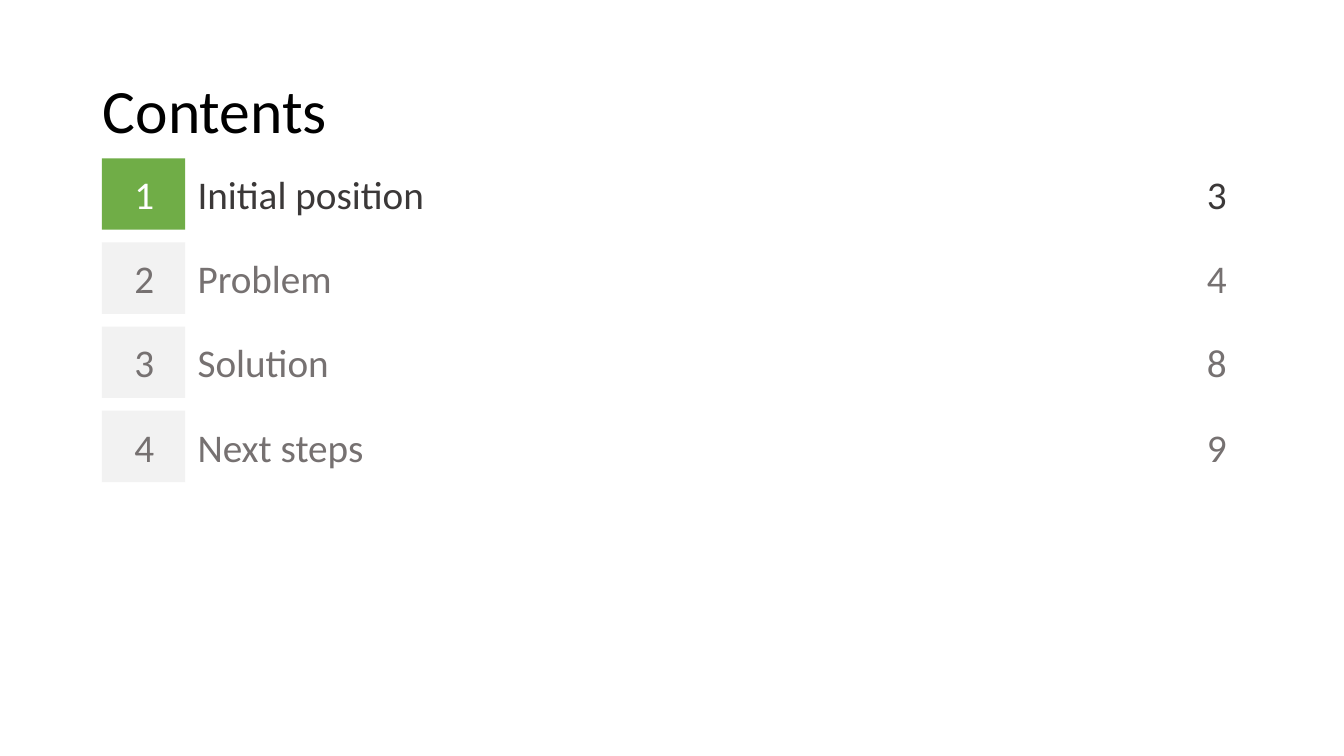
"""Build a contents slide with numbered chapters and page numbers."""
from dataclasses import dataclass

from pptx import Presentation
from pptx.dml.color import RGBColor
from pptx.enum import shapes, text
from pptx.util import Cm, Pt

FONT = "Calibri"
TOP, PITCH, ROW_H = 3.99, 2.12, 1.8
LEFT, CENTER = text.PP_ALIGN.LEFT, text.PP_ALIGN.CENTER


@dataclass
class Chapter:
    title: str
    page: int
    box: str = "F2F2F2"
    number: str = "767171"
    ink: str = "767171"


CHAPTERS = [
    Chapter("Initial position", 3, "70AD47", "FFFFFF", "3B3838"),
    Chapter("Problem", 4),
    Chapter("Solution", 8),
    Chapter("Next steps", 9),
]


def rgb(value: str) -> RGBColor:
    return RGBColor.from_string(value)


def write(sp, words: str, color: str, size: float = 28, align=LEFT,
          left: float = 0.25, right: float = 0.25):
    tf = sp.text_frame
    tf.word_wrap = True
    tf.vertical_anchor = text.MSO_ANCHOR.MIDDLE
    tf.margin_left, tf.margin_right = Cm(left), Cm(right)
    tf.margin_top = tf.margin_bottom = Cm(0.13)
    p = tf.paragraphs[0]
    p.alignment = align
    r = p.add_run()
    r.text = words
    r.font.name, r.font.size = FONT, Pt(size)
    r.font.color.rgb = rgb(color)
    return p


def add_text(s, x: float, y: float, w: float, h: float, *args, **kwargs):
    sp = s.shapes.add_textbox(Cm(x), Cm(y), Cm(w), Cm(h))
    return write(sp, *args, **kwargs)


def add_number_box(s, y: float, number: int, chapter: Chapter) -> None:
    sp = s.shapes.add_shape(shapes.MSO_SHAPE.RECTANGLE,
                            Cm(2.57), Cm(y), Cm(2.1), Cm(ROW_H))
    sp.shadow.inherit = False
    sp.fill.solid()
    sp.fill.fore_color.rgb = rgb(chapter.box)
    sp.line.fill.background()
    write(sp, str(number), chapter.number, align=CENTER, left=0.13, right=0.1)


def add_chapter(s, number: int, chapter: Chapter) -> None:
    y = TOP + (number - 1) * PITCH
    add_number_box(s, y, number, chapter)
    add_text(s, 4.85, y, 24.59, ROW_H, chapter.title, chapter.ink, left=0.13)
    add_text(s, 29.79, y, 1.75, ROW_H, str(chapter.page), chapter.ink,
             align=CENTER)


def main() -> None:
    prs = Presentation()
    prs.slide_width, prs.slide_height = Cm(33.87), Cm(19.05)
    s = prs.slides.add_slide(prs.slide_layouts[6])
    p = add_text(s, 2.34, 1.02, 29.21, 3.68, "Contents", "000000", size=44)
    p.line_spacing = 0.9
    for number, chapter in enumerate(CHAPTERS, 1):
        add_chapter(s, number, chapter)
    prs.save("out.pptx")


if __name__ == "__main__":
    main()
